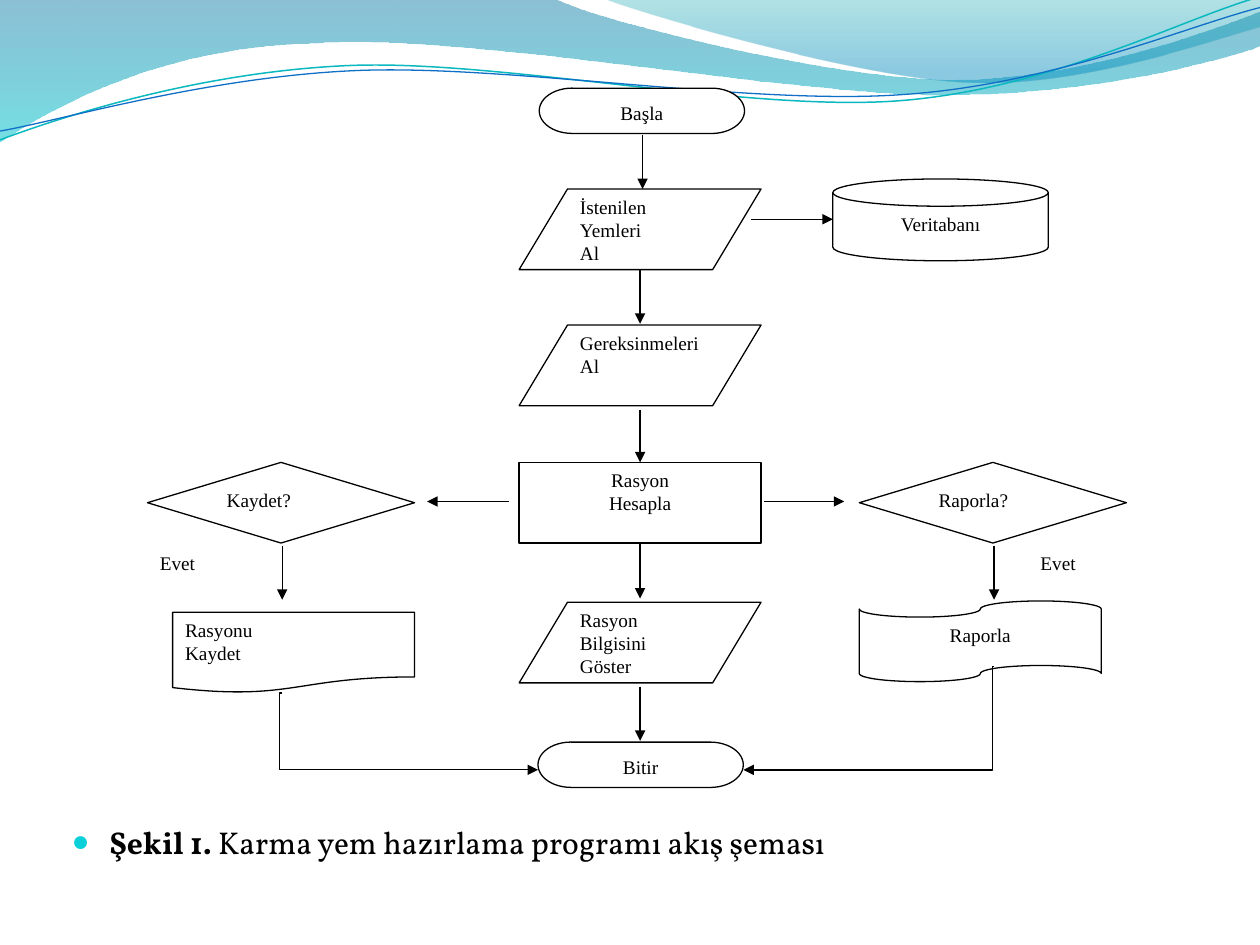
import math

from lxml import etree
from pptx import Presentation
from pptx import util as u
from pptx.dml.color import RGBColor
from pptx.enum import shapes, text
from pptx.oxml.ns import qn

BLACK = RGBColor(0x00, 0x00, 0x00)
WHITE = RGBColor(0xFF, 0xFF, 0xFF)
DEEP_BLUE = RGBColor(0x00, 0x74, 0xA1)
CYAN = RGBColor(0x00, 0xC6, 0xCF)
TEAL = RGBColor(0x00, 0xA1, 0xA9)
SKY_BLUE = RGBColor(0x00, 0x8B, 0xBF)
TEAL_LINE = RGBColor(0x0A, 0xB8, 0xBF)
BLUE_LINE = RGBColor(0x0F, 0x6F, 0xC6)
BULLET = RGBColor(0x0B, 0xD0, 0xD9)

KIND = shapes.MSO_SHAPE
LEFT, CENTER = text.PP_ALIGN.LEFT, text.PP_ALIGN.CENTER
RIPPLE_TILT = -2.7
RIPPLE_CENTER = (4.99, 0.58)


def sub(parent, tag, **attributes):
    return etree.SubElement(parent, qn(tag), **attributes)


def turn(point, degrees):
    """Point turned clockwise about the centre of the ripples."""
    angle = math.radians(degrees)
    dx, dy = point[0] - RIPPLE_CENTER[0], point[1] - RIPPLE_CENTER[1]
    return (RIPPLE_CENTER[0] + dx * math.cos(angle) - dy * math.sin(angle),
            RIPPLE_CENTER[1] + dx * math.sin(angle) + dy * math.cos(angle))


class FlowSlide:
    font = "Times New Roman"
    size = u.Pt(11)
    caption_font = "Vollkorn"
    caption_size = u.Pt(18)
    line_width = u.Pt(0.75)

    def __init__(self, slide):
        self.slide = slide

    def outline(self, start, segments, close):
        """Freeform whose segments are lists of one (line) or three (cubic) points."""
        points = [(u.Inches(x), u.Inches(y))
                  for x, y in [start] + [point for segment in segments for point in segment]]
        builder = self.slide.shapes.build_freeform(*points[0], scale=1.0)
        builder.add_line_segments(points[1:], close=close)
        shape = builder.convert_to_shape()
        shape.shadow.inherit = False
        # Join each three points of a cubic segment into one curve
        steps = iter(list(shape._element.spPr.iter(qn("a:lnTo"))))
        for segment in segments:
            group = [next(steps) for _ in segment]
            if len(group) == 3:
                group[0].tag = qn("a:cubicBezTo")
                for step in group[1:]:
                    group[0].append(step[0])
                    step.getparent().remove(step)
        return shape

    def wave(self, start, segments, stops):
        """Filled wave; each stop is (position, colour, opacity in percent)."""
        shape = self.outline(start, segments, True)
        shape.line.fill.background()
        shape.fill.gradient()
        shape.fill.gradient_angle = 270
        for stop, (position, color, _) in zip(shape.fill.gradient_stops, stops):
            stop.position = position
            stop.color.rgb = color
        colors = shape._element.spPr.iter(qn("a:srgbClr"))
        for element, (_, _, opacity) in zip(colors, stops):
            sub(element, "a:alpha", val=str(opacity * 1000))

    def ripple(self, start, segments, color, width):
        level = [[turn(point, -RIPPLE_TILT) for point in segment] for segment in segments]
        shape = self.outline(turn(start, -RIPPLE_TILT), level, False)
        shape.rotation = RIPPLE_TILT
        shape.fill.background()
        shape.line.color.rgb = color
        shape.line.width = u.Pt(width)

    def add_run(self, paragraph, words, font, size, bold=False):
        run = paragraph.add_run()
        run.text = words
        run.font.name, run.font.size, run.font.bold = font, size, bold
        run.font.color.rgb = BLACK

    def node(self, kind, left, top, width, height, lines, align=LEFT, border=True):
        shape = self.slide.shapes.add_shape(
            kind, u.Inches(left), u.Inches(top), u.Inches(width), u.Inches(height))
        shape.shadow.inherit = False
        shape.fill.solid()
        shape.fill.fore_color.rgb = WHITE
        if border:
            shape.line.color.rgb = BLACK
            shape.line.width = self.line_width
        else:
            shape.line.fill.background()
        frame = shape.text_frame
        frame.word_wrap = True
        frame.vertical_anchor = text.MSO_ANCHOR.TOP
        for index, words in enumerate(lines):
            paragraph = frame.add_paragraph() if index else frame.paragraphs[0]
            paragraph.alignment = align
            self.add_run(paragraph, words, self.font, self.size)
        return shape

    def arrow(self, x1, y1, x2, y2, bend=None):
        """Arrow to (x2, y2); bend is the elbow position in percent of the width."""
        kind = shapes.MSO_CONNECTOR.STRAIGHT if bend is None else shapes.MSO_CONNECTOR.ELBOW
        connector = self.slide.shapes.add_connector(
            kind, u.Inches(x1), u.Inches(y1), u.Inches(x2), u.Inches(y2))
        connector.line.color.rgb = BLACK
        connector.line.width = self.line_width
        properties = connector._element.spPr
        sub(properties.find(qn("a:ln")), "a:tailEnd", type="triangle")
        sub(properties, "a:effectLst")
        if bend is not None:
            guides = properties.find(qn("a:prstGeom")).find(qn("a:avLst"))
            sub(guides, "a:gd", name="adj1", fmla=f"val {round(bend * 1000)}")
        return connector

    def caption(self, left, top, width, height, label, words):
        box = self.slide.shapes.add_textbox(
            u.Inches(left), u.Inches(top), u.Inches(width), u.Inches(height))
        box.text_frame.word_wrap = True
        paragraph = box.text_frame.paragraphs[0]
        properties = paragraph._p.get_or_add_pPr()
        properties.set("marL", str(u.Inches(0.3)))
        properties.set("indent", str(-u.Inches(0.3)))
        sub(sub(properties, "a:spcBef"), "a:spcPct", val="20000")
        sub(sub(properties, "a:buClr"), "a:srgbClr", val=str(BULLET))
        sub(properties, "a:buSzPct", val="95000")
        sub(properties, "a:buFont", typeface=self.font)
        sub(properties, "a:buChar", char="●")
        self.add_run(paragraph, label, self.caption_font, self.caption_size, True)
        self.add_run(paragraph, words, self.caption_font, self.caption_size)


def main():
    presentation = Presentation()
    presentation.slide_width, presentation.slide_height = u.Inches(10), u.Inches(7.5)
    page = FlowSlide(presentation.slides.add_slide(presentation.slide_layouts[6]))

    # Waves along the top
    page.wave((0, 0), [
        [(4.4, -0.01)],
        [(4.76, 0.17), (6.64, 0.63), (7.58, 0.63)], [(8.53, 0.63), (9.58, 0.26), (10, 0.09)],
        [(10.01, 0.36)],
        [(9.83, 0.44), (8.7, 0.76), (7.46, 0.75)], [(6.22, 0.75), (3.82, 0.28), (2.57, 0.34)],
        [(1.29, 0.36), (0.46, 0.83), (-0.01, 1.13)]], [(0, DEEP_BLUE, 45), (1, CYAN, 55)])
    page.wave((4.79, -0.01), [
        [(5.09, 0.11), (6.82, 0.62), (7.69, 0.65)], [(8.56, 0.69), (9.61, 0.32), (10, 0.21)],
        [(10, 0)]], [(0, TEAL, 30), (0.8, SKY_BLUE, 45)])
    page.ripple((0, 1.11), [
        [(0.48, 0.93), (1.58, 0.57), (2.77, 0.52)], [(3.95, 0.47), (5.93, 0.89), (7.13, 0.8)],
        [(8.33, 0.71), (9.38, 0.15), (9.98, -0.02)]], TEAL_LINE, 0.85)
    page.ripple((0, 1.04), [
        [(0.47, 0.96), (1.64, 0.61), (2.83, 0.56)], [(4.03, 0.51), (5.97, 0.84), (7.17, 0.75)],
        [(8.36, 0.67), (9.41, 0.21), (10, 0.06)]], BLUE_LINE, 0.75)

    # Main column
    column, width, height = 4.12, 1.92, 0.64
    page.node(KIND.FLOWCHART_TERMINATOR, 4.28, 0.7, 1.63, 0.36, ["Başla"], CENTER)
    for top, lines in ((1.5, ["İstenilen Yemleri", "Al"]),
                       (2.58, ["Gereksinmeleri", "Al"]),
                       (4.78, ["Rasyon", "Bilgisini", "Göster"])):
        page.node(KIND.FLOWCHART_DATA, column, top, width, height, lines)
    process = page.node(KIND.FLOWCHART_PROCESS, column, 3.67, width, height,
                        ["Rasyon", "Hesapla"], CENTER)
    page.node(KIND.FLOWCHART_TERMINATOR, 4.27, 5.89, 1.63, 0.36, ["Bitir"], CENTER)

    # Side branches
    page.node(KIND.FLOWCHART_MAGNETIC_DISK, 6.61, 1.42, 1.71, 0.65, ["Veritabanı"], CENTER)
    page.node(KIND.FLOWCHART_DOCUMENT, 1.37, 4.86, width, height, ["Rasyonu", "Kaydet"])
    page.node(KIND.FLOWCHART_PUNCHED_TAPE, 6.82, 4.77, width, height, ["Raporla"], CENTER)
    for left, question, answer_left in ((1.17, "Kaydet?", 1.17), (6.82, "Raporla?", 8.16)):
        page.node(KIND.FLOWCHART_DECISION, left, 3.67, 2.12, height, [question])
        page.node(KIND.RECTANGLE, answer_left, 4.33, 0.9, 0.3, ["Evet"], border=False)

    # Downward arrows of equal length
    for x, top in ((5.1, 1.07), (5.08, 2.14), (5.08, 5.45), (2.24, 4.33), (7.89, 4.33)):
        page.arrow(x, top, x, top + 0.43)
    page.arrow(5.08, 3.25, 5.08, 3.67).end_connect(process, 0)
    page.arrow(5.08, 4.31, 5.08, 4.75).begin_connect(process, 2)

    # Sideways and bent arrows
    page.arrow(5.96, 1.74, 6.61, 1.74)
    page.arrow(6.06, 3.98, 6.7, 3.98)
    page.arrow(4.04, 3.98, 3.39, 3.98)
    page.arrow(2.24, 5.5, 4.27, 6.11, bend=-1)
    page.arrow(7.89, 5.29, 5.9, 6.11, bend=0.6)

    # Caption
    page.caption(0.47, 6.48, 9, 0.7, "Şekil 1. ", "Karma yem hazırlama programı akış şeması")

    presentation.save("out.pptx")


if __name__ == "__main__":
    main()
